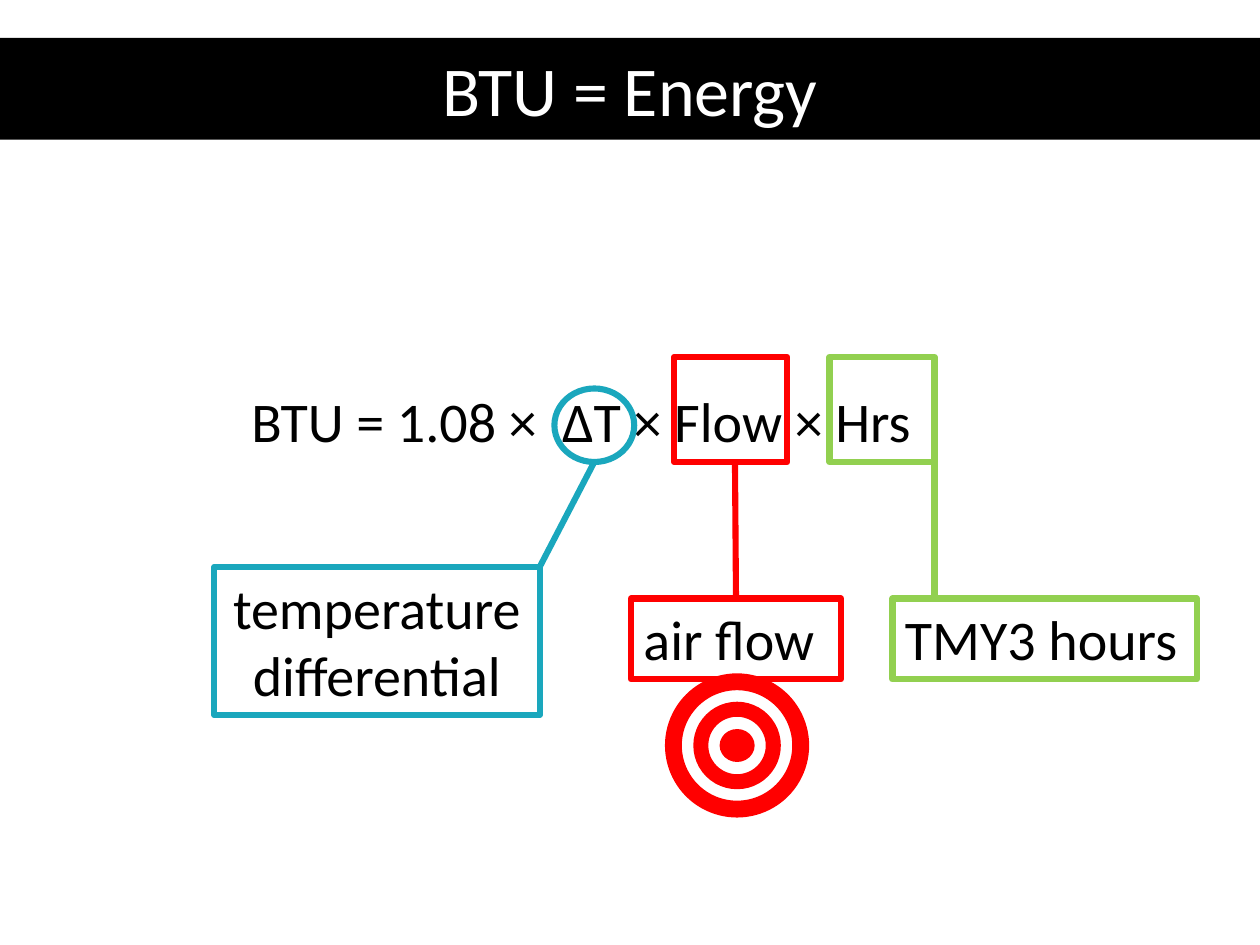
from dataclasses import dataclass

from pptx import Presentation
from pptx import util as u
from pptx.dml.color import RGBColor
from pptx.enum import shapes, text
from pptx.oxml import ns
from lxml import etree

CELL = u.Inches(10) / 120  # the slide is a grid of 120 columns by 90 rows
SHAPE = shapes.MSO_SHAPE


@dataclass(frozen=True)
class Theme:
    font: str = "Calibri"
    title_size: int = 40
    text_size: int = 32
    outline: float = 3.5
    ring_outline: float = 2
    black: str = "000000"
    white: str = "FFFFFF"
    red: str = "FF0000"
    green: str = "92D050"
    blue: str = "1AA7BD"


THEME = Theme()


def rgb(value):
    return RGBColor.from_string(value)


def cells(*counts):
    return [u.Emu(round(count * CELL)) for count in counts]


def place(shape, *area):
    shape.left, shape.top, shape.width, shape.height = cells(*area)


def write(shape, words, size, color, align):
    frame = shape.text_frame
    frame.word_wrap = True
    frame.text = words
    para = frame.paragraphs[0]
    para.alignment = align
    font = para.runs[0].font
    font.name, font.size = THEME.font, u.Pt(size)
    font.color.rgb = rgb(color)


def add_title(slide, words):
    title = slide.shapes.title
    place(title, 0, 3.6, 120, 9.7)
    title.fill.solid()
    title.fill.fore_color.rgb = rgb(THEME.black)
    write(title, words, THEME.title_size, THEME.white, text.PP_ALIGN.CENTER)
    title.text_frame.vertical_anchor = text.MSO_ANCHOR.MIDDLE


def add_formula(slide, words):
    body = slide.placeholders[1]
    place(body, 6, 21, 108, 59.5)
    write(body, words, THEME.text_size, THEME.black, text.PP_ALIGN.CENTER)
    frame = body.text_frame
    frame.auto_size = text.MSO_AUTO_SIZE.NONE
    frame.margin_top, frame.margin_right = u.Inches(1.32), u.Inches(0.87)
    para = frame.paragraphs[0]
    para.space_before = u.Pt(0)
    properties = para._p.get_or_add_pPr()
    properties.set("marL", "0")
    properties.set("indent", "0")
    etree.SubElement(properties, ns.qn("a:buNone"))


def add_outline(slide, kind, area, color):
    shape = slide.shapes.add_shape(kind, *cells(*area))
    shape.shadow.inherit = False
    shape.fill.background()
    shape.line.color.rgb = rgb(color)
    shape.line.width = u.Pt(THEME.outline)
    return shape


def add_label(slide, words, area, color, align=text.PP_ALIGN.LEFT):
    label = add_outline(slide, SHAPE.RECTANGLE, area, color)
    write(label, words, THEME.text_size, THEME.black, align)
    label.text_frame.vertical_anchor = text.MSO_ANCHOR.TOP
    return label


def add_line(slide, start, end, color):
    line = slide.shapes.add_connector(
        shapes.MSO_CONNECTOR.STRAIGHT, *cells(*start, *end))
    line.line.color.rgb = rgb(color)
    line.line.width = u.Pt(THEME.outline)
    etree.SubElement(line._element.spPr, ns.qn("a:effectLst"))
    return line


def add_target(slide, center_x, center_y):
    # Bull's eye first, then the rings outwards: kind, width, height, thickness
    rings = [(SHAPE.OVAL, 3, 2.8, None),
             (SHAPE.DONUT, 8, 8, 0.137),
             (SHAPE.DONUT, 13.4, 13.4, 0.095)]
    for kind, width, height, thickness in rings:
        area = (center_x - width / 2, center_y - height / 2, width, height)
        ring = add_outline(slide, kind, area, THEME.red)
        ring.line.width = u.Pt(THEME.ring_outline)
        ring.fill.solid()
        ring.fill.fore_color.rgb = rgb(THEME.red)
        if thickness:
            ring.adjustments[0] = thickness


def main():
    deck = Presentation()
    deck.slide_width, deck.slide_height = cells(120, 90)
    slide = deck.slides.add_slide(deck.slide_layouts[1])
    add_title(slide, "BTU = Energy")
    add_formula(slide, "BTU = 1.08 ×  ΔT × Flow × Hrs")

    # Air flow
    add_outline(slide, SHAPE.RECTANGLE, (64.2, 34, 10.8, 10), THEME.red)
    air_flow = add_label(slide, "air flow", (60.1, 57, 20, 7.7), THEME.red)
    flow_line = add_line(slide, (70, 44), (70.1, 57), THEME.red)
    flow_line.end_connect(air_flow, 0)

    # Hours
    add_outline(slide, SHAPE.RECTANGLE, (79, 34, 10, 10), THEME.green)
    add_line(slide, (89, 44), (89, 57), THEME.green)
    add_label(slide, "TMY3 hours", (85, 57, 29, 7.7), THEME.green)

    # Temperature differential
    add_outline(slide, SHAPE.OVAL, (52.8, 37, 7.6, 7), THEME.blue)
    add_line(slide, (56.6, 44), (51.4, 54), THEME.blue)
    add_label(slide, "temperature differential", (20.4, 54, 31, 14.1),
              THEME.blue, text.PP_ALIGN.CENTER)

    add_target(slide, 70.2, 71)
    deck.save("out.pptx")


if __name__ == "__main__":
    main()
